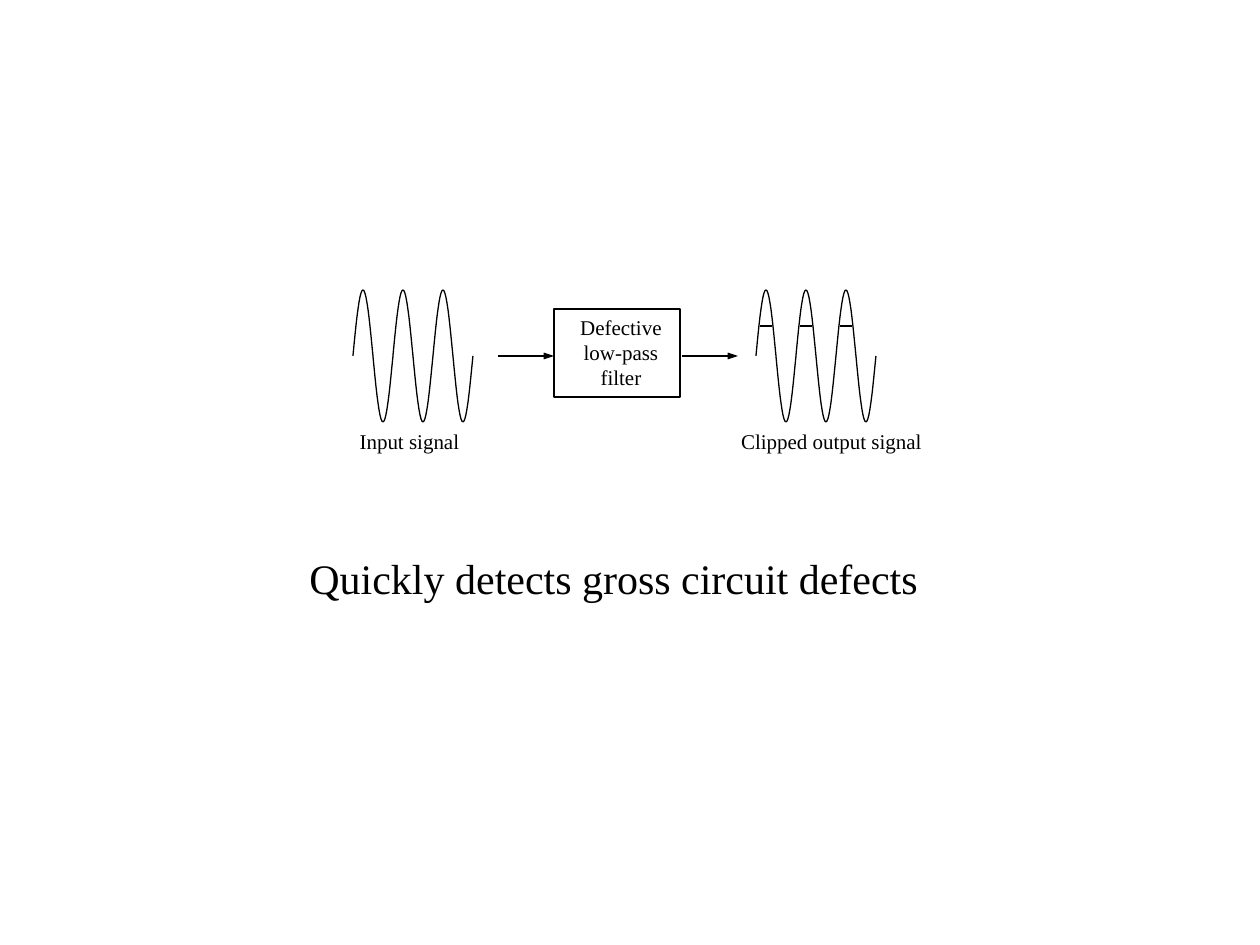
"""Builds a slide showing how a defective low-pass filter clips a signal."""
from math import pi, sin

from lxml.etree import SubElement
from pptx import Presentation
from pptx.dml.color import RGBColor
from pptx.enum.shapes import MSO_CONNECTOR, MSO_SHAPE
from pptx.enum.text import MSO_ANCHOR, PP_ALIGN
from pptx.oxml.ns import qn
from pptx.util import Pt

SCALE = 914400 / 126
BLACK = "000000"
FONT = "Times New Roman"
CENTER, LEFT = PP_ALIGN.CENTER, PP_ALIGN.LEFT

TEXTS = [
    (["Input signal"], (271, 422, 277, 44), 12, CENTER, True),
    (["Defective", "low-pass", "filter"], (555, 308, 132, 94), 12, CENTER, True),
    (["Clipped output signal"], (693, 422, 277, 50), 12, CENTER, True),
    (["Quickly detects gross circuit defects"], (297, 546, 640, 64), 24, LEFT, False),
]
FILTER_BOX = (554, 309, 126, 88)
INPUT_LEFT, OUTPUT_LEFT = 353, 756
MIDDLE, AMPLITUDE, PERIOD, CYCLES = 356, 66, 40, 3
QUARTER, STEPS = PERIOD // 4, 10
CLIP_TOP, CLIP_INSET, CLIP_WIDTH = 326, 4, 12
ARROW_LEFTS, ARROW_LENGTH = (498, 682), 56


def px(value):
    return round(value * SCALE)


def color(value):
    return RGBColor.from_string(value)


def style_line(shape, width):
    shape.line.color.rgb = color(BLACK)
    shape.line.width = Pt(width)


def add_text(page, lines, area, size, align, wrap):
    frame = page.shapes.add_textbox(*map(px, area)).text_frame
    frame.word_wrap = wrap
    frame.vertical_anchor = MSO_ANCHOR.TOP
    frame.text = "\n".join(lines)
    for para in frame.paragraphs:
        para.alignment = align
        para.font.name = FONT
        para.font.size = Pt(size)
        para.font.color.rgb = color(BLACK)


def add_filter_box(page):
    box = page.shapes.add_shape(MSO_SHAPE.RECTANGLE, *map(px, FILTER_BOX))
    box.shadow.inherit = False
    box.fill.background()
    style_line(box, 1.25)


def add_quarter_wave(page, left, quarter):
    start = quarter * QUARTER
    offsets = [start + QUARTER * step / STEPS for step in range(STEPS + 1)]
    points = [
        (px(left + offset), px(MIDDLE - AMPLITUDE * sin(2 * pi * offset / PERIOD)))
        for offset in offsets
    ]
    builder = page.shapes.build_freeform(*points[0])
    builder.add_line_segments(points[1:], close=False)
    curve = builder.convert_to_shape()
    curve.shadow.inherit = False
    curve.fill.background()
    style_line(curve, 0.75)


def add_line(page, left, top, length, arrow=False):
    line = page.shapes.add_connector(
        MSO_CONNECTOR.STRAIGHT, px(left), px(top), px(left + length), px(top))
    style_line(line, 0.75)
    properties = line._element.spPr
    if arrow:
        SubElement(properties.find(qn("a:ln")), qn("a:tailEnd"),
                   type="triangle", w="sm", len="med")
    SubElement(properties, qn("a:effectLst"))


def main():
    deck = Presentation()
    deck.slide_width, deck.slide_height = px(1260), px(945)
    page = deck.slides.add_slide(deck.slide_layouts[6])
    add_filter_box(page)
    for left in (INPUT_LEFT, OUTPUT_LEFT):
        for quarter in range(4 * CYCLES):
            add_quarter_wave(page, left, quarter)
    for cycle in range(CYCLES):
        add_line(page, OUTPUT_LEFT + CLIP_INSET + cycle * PERIOD, CLIP_TOP, CLIP_WIDTH)
    for left in ARROW_LEFTS:
        add_line(page, left, MIDDLE, ARROW_LENGTH, arrow=True)
    for text in TEXTS:
        add_text(page, *text)
    deck.save("out.pptx")


if __name__ == "__main__":
    main()
